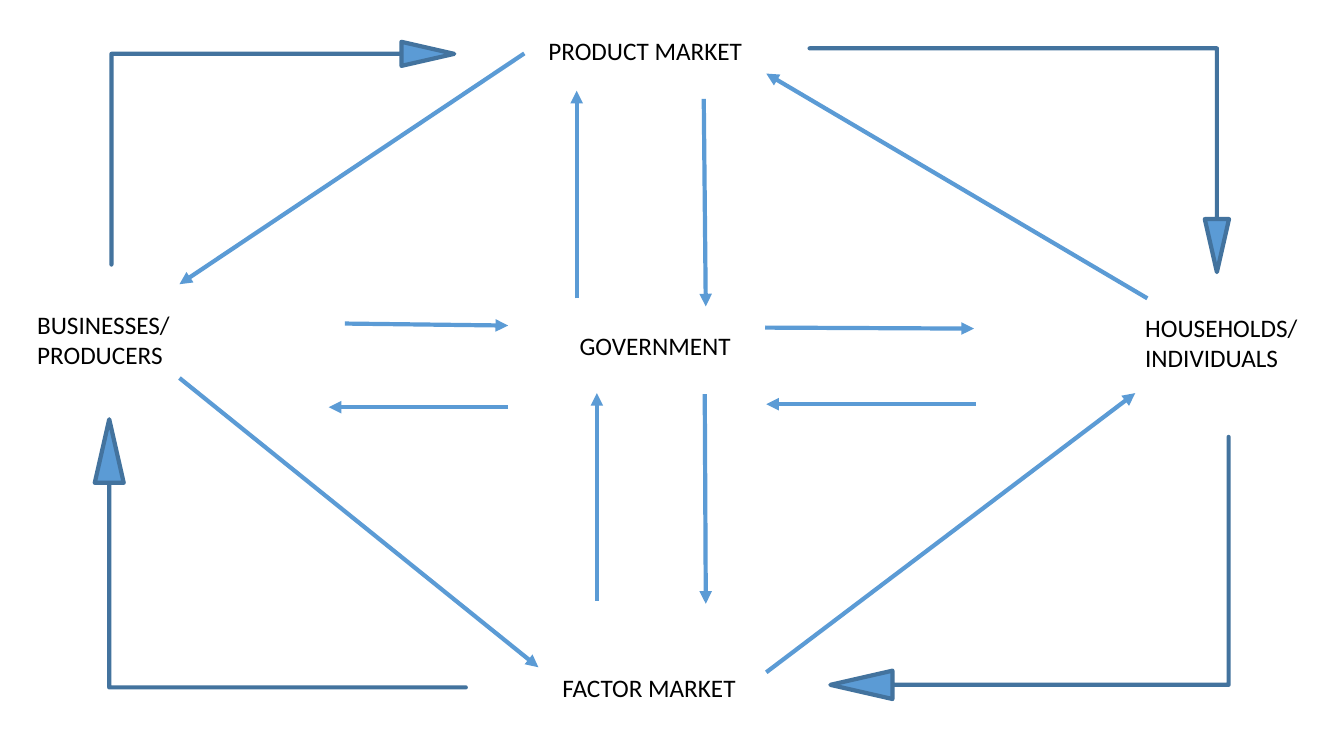
"""Circular flow of the economy: markets, producers, households and government."""
from dataclasses import dataclass

from lxml import etree
from pptx import Presentation, util as u
from pptx.dml.color import RGBColor
from pptx.enum import shapes, text
from pptx.oxml.ns import qn
from pptx.slide import Slide


@dataclass(frozen=True)
class Theme:
    font: str = "Calibri"
    label_size: float = 18
    line_width: float = 3
    ink: RGBColor = RGBColor(0x00, 0x00, 0x00)
    flow: RGBColor = RGBColor(0x5B, 0x9B, 0xD5)
    outline: RGBColor = RGBColor(0x43, 0x73, 0x9E)


@dataclass(frozen=True)
class Label:
    lines: tuple[str, ...]
    left: float
    top: float
    width: float
    height: float = 0.4


@dataclass(frozen=True)
class Flow:
    start: tuple[float, float]
    end: tuple[float, float]


@dataclass(frozen=True)
class Bend:
    left: float
    top: float
    width: float
    height: float
    flip: str
    rotation: float = 0


THEME = Theme()
BEND_ADJUSTMENTS = (0, 0.054, 0.237)  # shaft, head half-width, head length

LABELS = (
    Label(("PRODUCT MARKET",), 5.34, 0.3, 2.28),
    Label(("BUSINESSES/ PRODUCERS",), 0.27, 3.02, 1.61, 0.71),
    Label(("HOUSEHOLDS/", "INDIVIDUALS"), 11.26, 3.05, 1.86, 0.71),
    Label(("FACTOR MARKET",), 5.48, 6.62, 2.28),
    Label(("GOVERNMENT",), 5.65, 3.23, 1.94),
)

BENDS = (
    Bend(1.7, -0.18, 2.21, 3.4, "flipV", 270),  # businesses to product market
    Bend(0.94, 4.16, 3.68, 2.66, "flipH"),  # factor market to businesses
    Bend(8.91, 3.66, 2.6, 3.95, "flipH", 270),  # households to factor market
    Bend(8.03, 0.48, 4.16, 2.22, "flipV"),  # product market to households
)

FLOWS = (
    # Between markets, businesses and households
    Flow((11.38, 2.96), (7.6, 0.73)),
    Flow((5.2, 0.53), (1.78, 2.82)),
    Flow((1.78, 3.75), (5.34, 6.62)),
    Flow((7.6, 6.67), (11.26, 3.9)),
    # Government and product market
    Flow((5.72, 2.96), (5.72, 0.9)),
    Flow((6.98, 0.98), (7, 3.04)),
    # Government and factor market
    Flow((5.92, 5.96), (5.92, 3.9)),
    Flow((6.99, 3.91), (7, 5.99)),
    # Government and businesses
    Flow((5.04, 4.04), (3.26, 4.04)),
    Flow((3.42, 3.21), (5.04, 3.23)),
    # Government and households
    Flow((9.68, 4.01), (7.6, 4.01)),
    Flow((7.59, 3.25), (9.66, 3.26)),
)


def write_text(box, lines: tuple[str, ...], *, size: float, font: str,
               color: RGBColor) -> None:
    frame = box.text_frame
    frame.word_wrap = True
    frame.auto_size = text.MSO_AUTO_SIZE.SHAPE_TO_FIT_TEXT
    for index, line in enumerate(lines):
        para = frame.add_paragraph() if index else frame.paragraphs[0]
        span = para.add_run()
        span.text = line
        span.font.size = u.Pt(size)
        span.font.name = font
        span.font.color.rgb = color


def draw_label(page: Slide, label: Label) -> None:
    box = page.shapes.add_textbox(u.Inches(label.left), u.Inches(label.top),
                                  u.Inches(label.width), u.Inches(label.height))
    write_text(box, label.lines, size=THEME.label_size, font=THEME.font,
               color=THEME.ink)


def draw_bend(page: Slide, bend: Bend) -> None:
    arrow = page.shapes.add_shape(
        shapes.MSO_SHAPE.BENT_UP_ARROW, u.Inches(bend.left), u.Inches(bend.top),
        u.Inches(bend.width), u.Inches(bend.height))
    for index, value in enumerate(BEND_ADJUSTMENTS):
        arrow.adjustments[index] = value
    arrow.rotation = bend.rotation
    arrow.element.spPr.find(qn("a:xfrm")).set(bend.flip, "1")
    arrow.shadow.inherit = False
    arrow.fill.solid()
    arrow.fill.fore_color.rgb = THEME.flow
    arrow.line.color.rgb = THEME.outline
    arrow.line.width = u.Pt(THEME.line_width)


def draw_flow(page: Slide, flow: Flow) -> None:
    points = [u.Inches(value) for value in (*flow.start, *flow.end)]
    arrow = page.shapes.add_connector(shapes.MSO_CONNECTOR.STRAIGHT, *points)
    arrow.line.color.rgb = THEME.flow
    arrow.line.width = u.Pt(THEME.line_width)
    properties = arrow.element.spPr
    # Arrowhead at the end, no shadow
    etree.SubElement(properties.find(qn("a:ln")), qn("a:tailEnd"), type="triangle")
    etree.SubElement(properties, qn("a:effectLst"))


def main() -> None:
    deck = Presentation()
    deck.slide_width, deck.slide_height = u.Inches(13.33), u.Inches(7.5)
    page = deck.slides.add_slide(deck.slide_layouts[6])
    for label in LABELS:
        draw_label(page, label)
    for bend in BENDS:
        draw_bend(page, bend)
    for flow in FLOWS:
        draw_flow(page, flow)
    deck.save("out.pptx")


if __name__ == "__main__":
    main()
